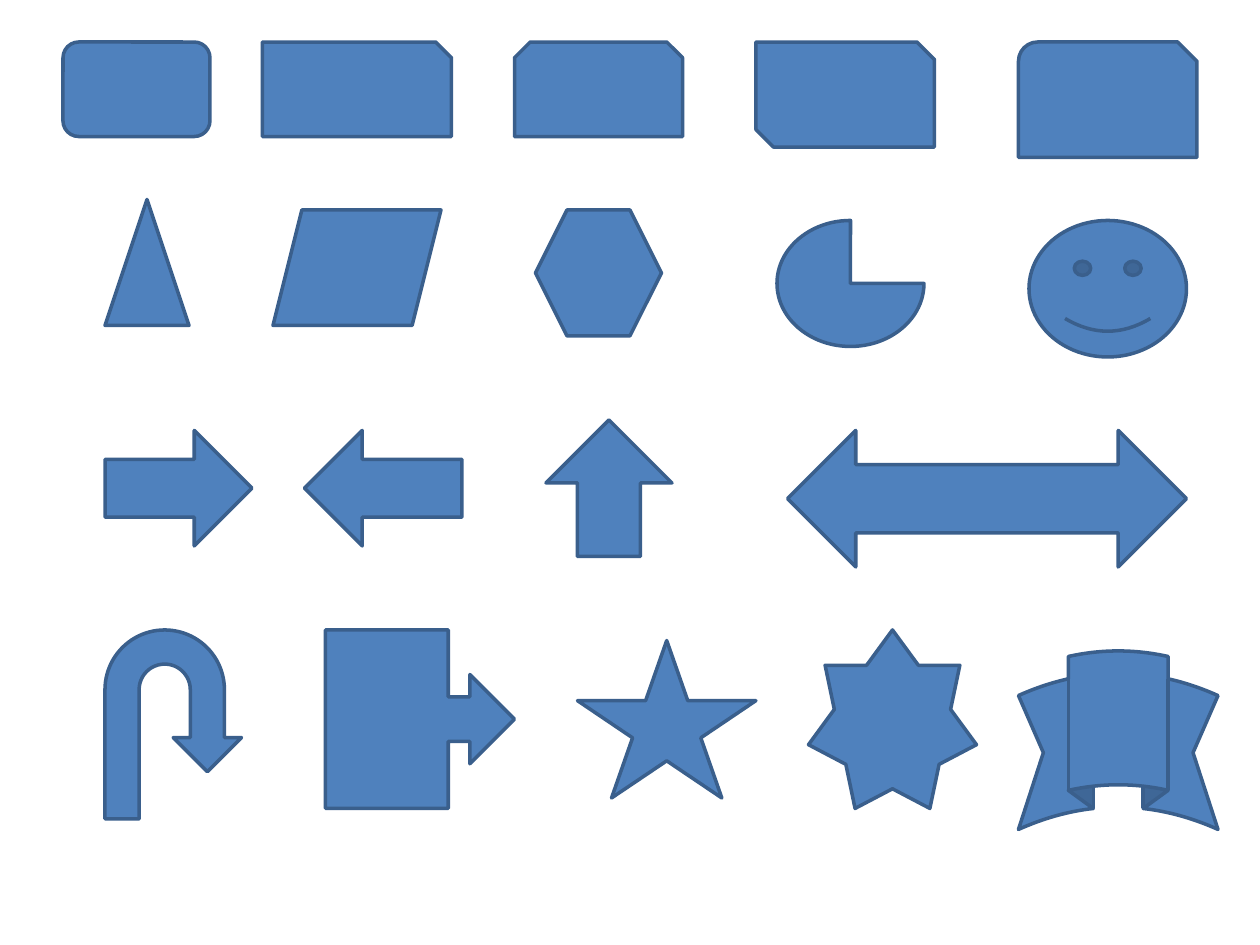
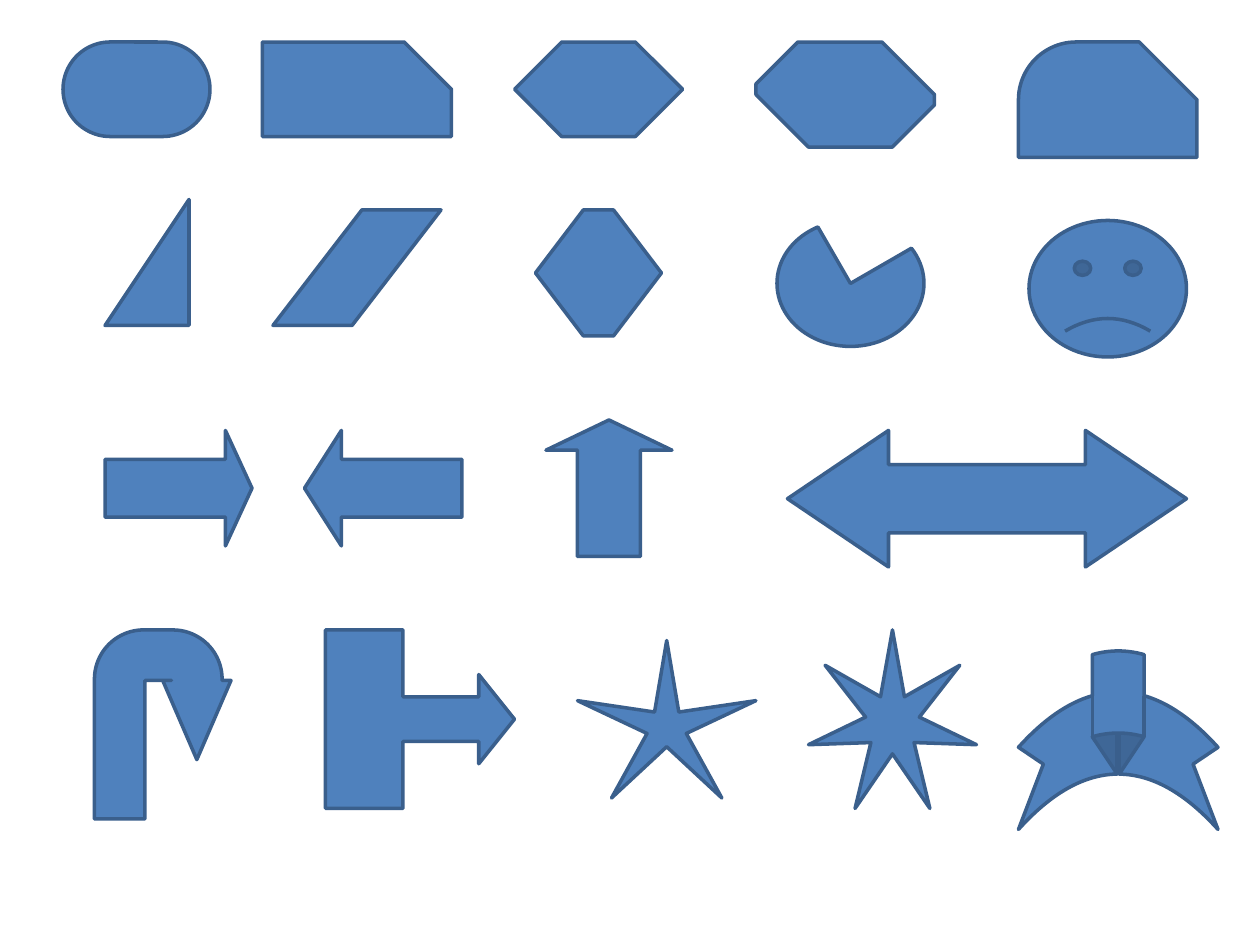
"""Build two slides of preset shapes: default outlines, then adjusted ones."""
from pptx import Presentation
from pptx.dml.color import RGBColor
from pptx.enum.shapes import MSO_SHAPE
from pptx.util import Cm, Pt

GRID_STEPS_PER_INCH = 12
SLIDE_WIDTH, SLIDE_HEIGHT = Cm(25.4), Cm(19.05)
FILL, OUTLINE = "4F81BD", "3A5F8C"
OUTLINE_WIDTH = Pt(2)
PIE_DEGREE = 0.6

# Name, (left, top, width, height) in grid steps, adjustments on the second slide
GALLERY = [
    ("ROUNDED_RECTANGLE", (6, 4, 14, 9), [0.5]),
    ("SNIP_1_RECTANGLE", (25, 4, 18, 9), [0.5]),
    ("SNIP_2_SAME_RECTANGLE", (49, 4, 16, 9), [0.5, 0.5]),
    ("SNIP_2_DIAG_RECTANGLE", (72, 4, 17, 10), [0.4, 0.5]),
    ("SNIP_ROUND_RECTANGLE", (97, 4, 17, 11), [0.5, 0.5]),
    ("ISOSCELES_TRIANGLE", (10, 19, 8, 12), [1]),
    ("PARALLELOGRAM", (26, 20, 16, 11), [0.77]),
    ("HEXAGON", (51, 20, 12, 12), [0.38]),
    ("PIE", (74, 21, 14, 12), [330 * PIE_DEGREE, 240 * PIE_DEGREE]),
    ("SMILEY_FACE", (98, 21, 15, 13), [-0.05]),
    ("RIGHT_ARROW", (10, 41, 14, 11), [0.5, 0.23]),
    ("LEFT_ARROW", (29, 41, 15, 11), [0.5, 0.32]),
    ("UP_ARROW", (52, 40, 12, 13), [0.5, 0.24]),
    ("LEFT_RIGHT_ARROW", (75, 41, 38, 13), [0.5, 0.74]),
    ("U_TURN_ARROW", (10, 60, 13, 18), [0.37, 0.25, 0.58, 0.36, 0.68]),
    ("RIGHT_ARROW_CALLOUT", (31, 60, 18, 17), [0.25, 0.25, 0.2, 0.41]),
    ("STAR_5_POINT", (55, 61, 17, 15), [0.11]),
    ("STAR_7_POINT", (77, 60, 16, 17), [0.16]),
    ("CURVED_UP_RIBBON", (97, 62, 19, 17), [0.54, 0.26, 0.31]),
]
MOVED_LEFT = {"U_TURN_ARROW": 9}


def color(hex_string):
    return RGBColor.from_string(hex_string)


def grid(steps):
    return Cm(2.54 * steps / GRID_STEPS_PER_INCH)


def add_gallery_shape(slide, name, box, adjustments=()):
    shape = slide.shapes.add_shape(getattr(MSO_SHAPE, name), *map(grid, box))
    shape.shadow.inherit = False
    shape.fill.solid()
    shape.fill.fore_color.rgb = color(FILL)
    shape.line.color.rgb = color(OUTLINE)
    shape.line.width = OUTLINE_WIDTH
    for index, value in enumerate(adjustments):
        shape.adjustments[index] = value


def main():
    presentation = Presentation()
    presentation.slide_width = SLIDE_WIDTH
    presentation.slide_height = SLIDE_HEIGHT
    blank = presentation.slide_layouts[6]
    default_slide = presentation.slides.add_slide(blank)
    adjusted_slide = presentation.slides.add_slide(blank)
    for name, box, adjustments in GALLERY:
        add_gallery_shape(default_slide, name, box)
        adjusted_box = (MOVED_LEFT.get(name, box[0]), *box[1:])
        add_gallery_shape(adjusted_slide, name, adjusted_box, adjustments)
    presentation.save("out.pptx")


if __name__ == "__main__":
    main()
